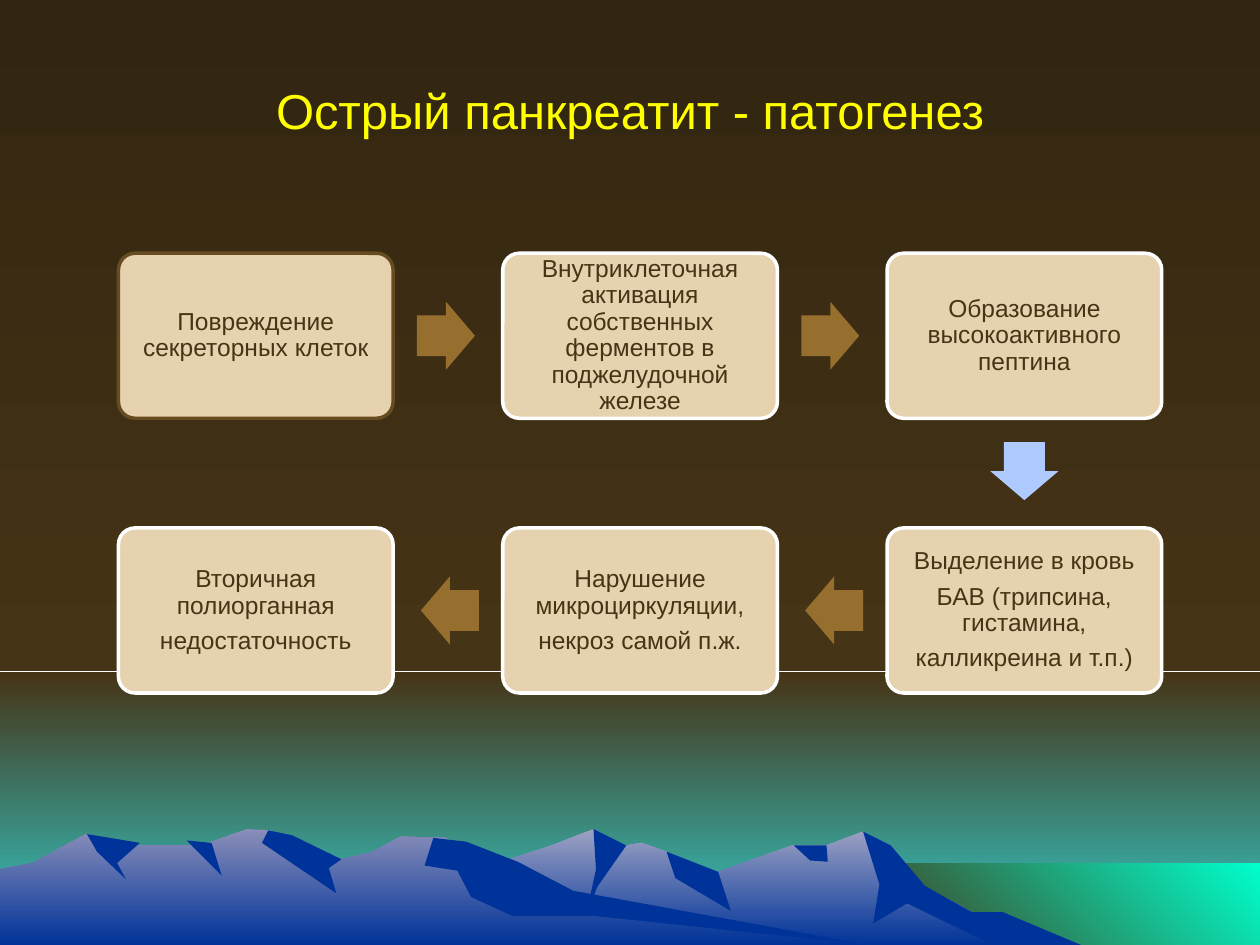
"""Builds a slide on the pathogenesis of acute pancreatitis as a six-step flow above a mountain landscape."""
import pptx
import pptx.dml.color
import pptx.enum.shapes
import pptx.enum.text
import pptx.util

RGB = pptx.dml.color.RGBColor
Inches, Pt = pptx.util.Inches, pptx.util.Pt
SHAPE = pptx.enum.shapes.MSO_SHAPE

NIGHT, BROWN, TEAL = RGB.from_string("322510"), RGB.from_string("463416"), RGB.from_string("33CCCC")
GLOW, NAVY = RGB.from_string("00FFCC"), RGB.from_string("003399")
RIGHT_PEAK, LEFT_PEAK = RGB.from_string("9EA2C3"), RGB.from_string("8A8EB9")
YELLOW, WHITE, SAND = RGB.from_string("FFFF00"), RGB.from_string("FFFFFF"), RGB.from_string("E6D2AF")
UMBER, OCHRE, SKY_BLUE = RGB.from_string("664C20"), RGB.from_string("966F2F"), RGB.from_string("AECAFF")

FONT = "Arial"
TITLE = "Острый панкреатит - патогенез"
STEPS = [
    (0, 0, ["Повреждение секреторных клеток"]),
    (1, 0, ["Внутриклеточная активация собственных ферментов в поджелудочной железе"]),
    (2, 0, ["Образование высокоактивного пептина"]),
    (2, 1, ["Выделение в кровь", "БАВ (трипсина, гистамина,", "калликреина и т.п.)"]),
    (1, 1, ["Нарушение микроциркуляции,", "некроз самой п.ж."]),
    (0, 1, ["Вторичная полиорганная", "недостаточность"]),
]

SLIDE_W, SLIDE_H = 10, 7.5
HORIZON, SHORE_LEFT, SHORE_TOP = 5.33, 6.83, 6.85
GRID_LEFT, GRID_TOP = 0.94, 2.01
COLUMN_PITCH, ROW_PITCH = 3.05, 2.18
BOX_W, BOX_H = 2.18, 1.31
ARROW_W, ARROW_H, ARROW_GAP = 0.46, 0.54, 0.19
TURN = {(1, 0): 0, (0, 1): 90, (-1, 0): 180}

BACKDROP = [
    (0, HORIZON, (BROWN, TEAL, 270)),
    (0, 0, (NIGHT, BROWN, 270)),
    (SHORE_LEFT, SHORE_TOP, (BROWN, GLOW, 45)),
]
MOUNTAINS = [
    ((RIGHT_PEAK, NAVY, 270), [
        (2.58, 7.5), (3.55, 6.98), (4.38, 6.71), (4.71, 6.58), (4.86, 6.73), (5.09, 6.69),
        (5.29, 6.76), (5.36, 6.9), (5.7, 6.92), (6.29, 6.71), (6.56, 6.71), (6.85, 6.6),
        (7.23, 6.98), (8.2, 7.5)]),
    (NAVY, [(6.85, 6.6), (7.07, 6.71), (7.34, 7.03), (7.71, 7.24), (7.96, 7.24), (8.58, 7.5),
            (7.88, 7.5), (7.2, 7.17), (6.93, 7.33), (6.98, 7.02)]),
    (NAVY, [(4.71, 6.58), (4.97, 6.71), (4.74, 7.04), (4.65, 7.27), (4.73, 6.9)]),
    (NAVY, [(5.29, 6.76), (5.7, 6.92), (5.8, 7.23), (5.36, 6.97)]),
    (NAVY, [(6.3, 6.71), (6.56, 6.71), (6.57, 6.84), (6.43, 6.83)]),
    ((LEFT_PEAK, NAVY, 270), [
        (0, 7.5), (0, 6.9), (0.26, 6.85), (0.68, 6.62), (0.94, 6.71), (1.6, 6.71),
        (1.96, 6.58), (2.15, 6.59), (2.71, 6.82), (2.96, 6.76), (3.18, 6.64), (3.54, 6.65),
        (4.32, 7.12), (6.9, 7.5)]),
    (NAVY, [(2.13, 6.59), (2.32, 6.63), (2.71, 6.82), (2.61, 6.89), (2.67, 7.09), (2.08, 6.69)]),
    (NAVY, [(3.44, 6.65), (3.7, 6.68), (4.11, 6.84), (4.55, 7.07), (6.9, 7.5), (4.72, 7.27),
            (4.07, 7.27), (3.74, 7.12), (3.63, 6.91), (3.37, 6.87)]),
    (NAVY, [(1.48, 6.67), (1.68, 6.69), (1.76, 6.95)]),
    (NAVY, [(0.69, 6.62), (1.11, 6.69), (0.93, 6.85), (1, 6.98), (0.77, 6.76)]),
]


def paint(shape, fill, outline=None):
    shape.shadow.inherit = False
    if isinstance(fill, RGB):
        shape.fill.solid()
        shape.fill.fore_color.rgb = fill
    else:
        *colors, angle = fill
        shape.fill.gradient()
        shape.fill.gradient_angle = angle
        for stop, color in zip(shape.fill.gradient_stops, colors):
            stop.color.rgb = color
    if outline is None:
        shape.line.fill.background()
    else:
        shape.line.color.rgb = outline
        shape.line.width = Pt(2)


def write(shape, lines, size, color):
    frame = shape.text_frame
    frame.word_wrap = True
    frame.vertical_anchor = pptx.enum.text.MSO_ANCHOR.MIDDLE
    frame.text = "\n".join(lines)
    for paragraph in frame.paragraphs:
        paragraph.alignment = pptx.enum.text.PP_ALIGN.CENTER
        paragraph.font.name = FONT
        paragraph.font.size = Pt(size)
        paragraph.font.color.rgb = color
    return frame


def add_centred(shapes, preset, centre, width, height):
    x, y = centre
    return shapes.add_shape(preset, Inches(x - width / 2), Inches(y - height / 2),
                            Inches(width), Inches(height))


def add_landscape(shapes):
    for left, top, fill in BACKDROP:
        bottom = SLIDE_H if top else HORIZON
        paint(shapes.add_shape(SHAPE.RECTANGLE, Inches(left), Inches(top),
                               Inches(SLIDE_W - left), Inches(bottom - top)), fill)
    for fill, outline in MOUNTAINS:
        start, *rest = [(Inches(x), Inches(y)) for x, y in outline]
        builder = shapes.build_freeform(*start)
        builder.add_line_segments(rest, close=True)
        paint(builder.convert_to_shape(), fill)


def add_step(shapes, centre, lines, outline):
    box = add_centred(shapes, SHAPE.ROUNDED_RECTANGLE, centre, BOX_W, BOX_H)
    box.adjustments[0] = 0.1
    paint(box, SAND, outline)
    frame = write(box, lines, 14, BROWN)
    frame.margin_left = frame.margin_right = Inches(0.02)
    frame.margin_top = frame.margin_bottom = Inches(0.02)
    for paragraph in frame.paragraphs:
        paragraph.line_spacing = 0.9
        paragraph.space_after = Pt(5)


def add_arrow(shapes, centre, direction):
    dx, dy = direction
    reach = ARROW_GAP + ARROW_W / 2
    middle = (centre[0] + dx * (BOX_W / 2 + reach), centre[1] + dy * (BOX_H / 2 + reach))
    arrow = add_centred(shapes, SHAPE.RIGHT_ARROW, middle, ARROW_W, ARROW_H)
    arrow.adjustments[0], arrow.adjustments[1] = 0.6, 0.5
    arrow.rotation = TURN[direction]
    paint(arrow, SKY_BLUE if dy else OCHRE)


def main():
    deck = pptx.Presentation()
    deck.slide_width, deck.slide_height = Inches(SLIDE_W), Inches(SLIDE_H)
    shapes = deck.slides.add_slide(deck.slide_layouts[6]).shapes
    add_landscape(shapes)

    title = shapes.add_textbox(Inches(0.5), Inches(0.25), Inches(SLIDE_W - 1), Inches(1.25))
    write(title, [TITLE], 28, YELLOW)

    for index, (column, row, lines) in enumerate(STEPS):
        centre = (GRID_LEFT + column * COLUMN_PITCH + BOX_W / 2,
                  GRID_TOP + row * ROW_PITCH + BOX_H / 2)
        add_step(shapes, centre, lines, WHITE if index else UMBER)
        if index + 1 < len(STEPS):
            next_column, next_row, _ = STEPS[index + 1]
            add_arrow(shapes, centre, (next_column - column, next_row - row))

    deck.save("out.pptx")


if __name__ == "__main__":
    main()
